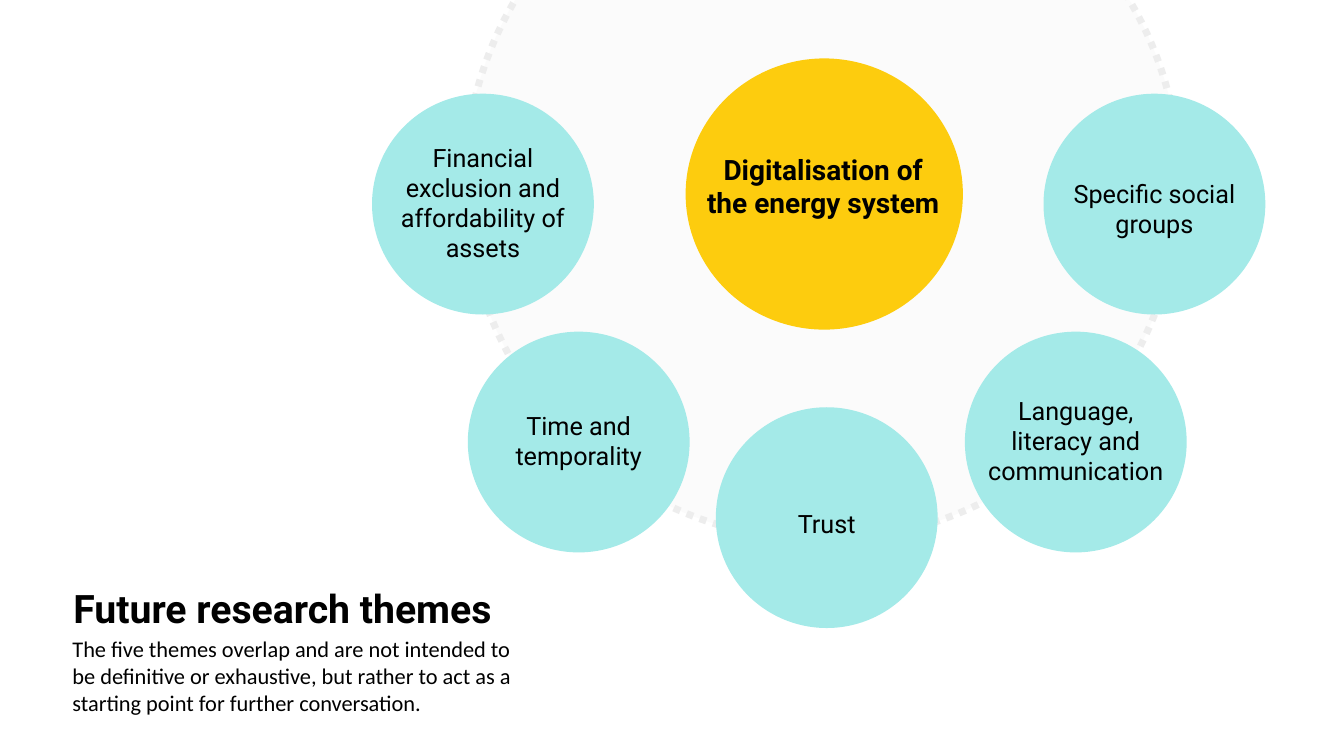
"""Build the slide of future research themes around digitalisation."""
from pptx import Presentation
from pptx.dml.color import RGBColor
from pptx.enum.dml import MSO_LINE
from pptx.enum.shapes import MSO_SHAPE
from pptx.enum.text import MSO_ANCHOR, PP_ALIGN
from pptx.util import Inches, Pt

OVAL = MSO_SHAPE.OVAL
DOTS = MSO_LINE.ROUND_DOT
LEFT, CENTER = PP_ALIGN.LEFT, PP_ALIGN.CENTER
TOP, MIDDLE = MSO_ANCHOR.TOP, MSO_ANCHOR.MIDDLE
COLORS = {"disc": "FBFBFB", "ring": "EDEDED", "hub": "FDCC0E",
          "theme": "A4EAE8", "text": "000000"}
WIDTH, HEIGHT = 2.2, 2.19
THEMES = [
    ("Financial exclusion and affordability of assets", 3.69, 0.93, 1.36, 1.33),
    ("Time and temporality", 4.64, 3.29, 4.02, 0.71),
    ("Specific social groups", 10.35, 0.93, 1.72, 0.71),
    ("Language, literacy and communication", 9.57, 3.29, 3.87, 1.01),
    ("Trust", 7.1, 4.04, 4.99, 0.4),
]


class Canvas:
    def __init__(self, slide, face="Roboto"):
        self.shapes = slide.shapes
        self.face = face

    def color(self, name):
        return RGBColor.from_string(COLORS[name])

    def circle(self, x, y, w, h, fill, line=None):
        oval = self.shapes.add_shape(OVAL, *map(Inches, (x, y, w, h)))
        oval.shadow.inherit = False
        oval.fill.solid()
        oval.fill.fore_color.rgb = self.color(fill)
        if line:
            oval.line.color.rgb = self.color(line)
            oval.line.width = Pt(5)
            oval.line.dash_style = DOTS
        else:
            oval.line.fill.background()

    def text(self, words, x, y, w, h, size=18, bold=False, align=CENTER,
             anchor=TOP, face=None, spacing=None):
        frame = self.shapes.add_textbox(*map(Inches, (x, y, w, h))).text_frame
        frame.word_wrap = True
        frame.vertical_anchor = anchor
        para = frame.paragraphs[0]
        para.text = words
        para.alignment = align
        para.line_spacing = spacing
        font = para.font
        font.name = face or self.face
        font.size = Pt(size)
        font.bold = bold
        font.color.rgb = self.color("text")


def main():
    deck = Presentation()
    deck.slide_width, deck.slide_height = Inches(13.33), Inches(7.5)
    canvas = Canvas(deck.slides.add_slide(deck.slide_layouts[6]))

    canvas.circle(4.61, -1.73, 7.09, 7.09, "disc", "ring")
    canvas.circle(6.8, 0.58, 2.75, 2.69, "hub")
    canvas.text("Digitalisation of the energy system", 6.89, 1.46, 2.55, 1.11,
                size=20, bold=True)
    for words, x, y, top, tall in THEMES:
        canvas.circle(x, y, WIDTH, HEIGHT, "theme")
        canvas.text(words, x, top, WIDTH, tall)

    canvas.text("The five themes overlap and are not intended to be definitive "
                "or exhaustive, but rather to act as a starting point for "
                "further conversation.", 0.62, 6.25, 4.56, 0.91,
                size=16, align=LEFT, face="Calibri")
    canvas.text("Future research themes", 0.63, 5.32, 10, 1.47, size=28,
                bold=True, align=LEFT, anchor=MIDDLE, spacing=0.9)
    deck.save("out.pptx")


if __name__ == "__main__":
    main()
